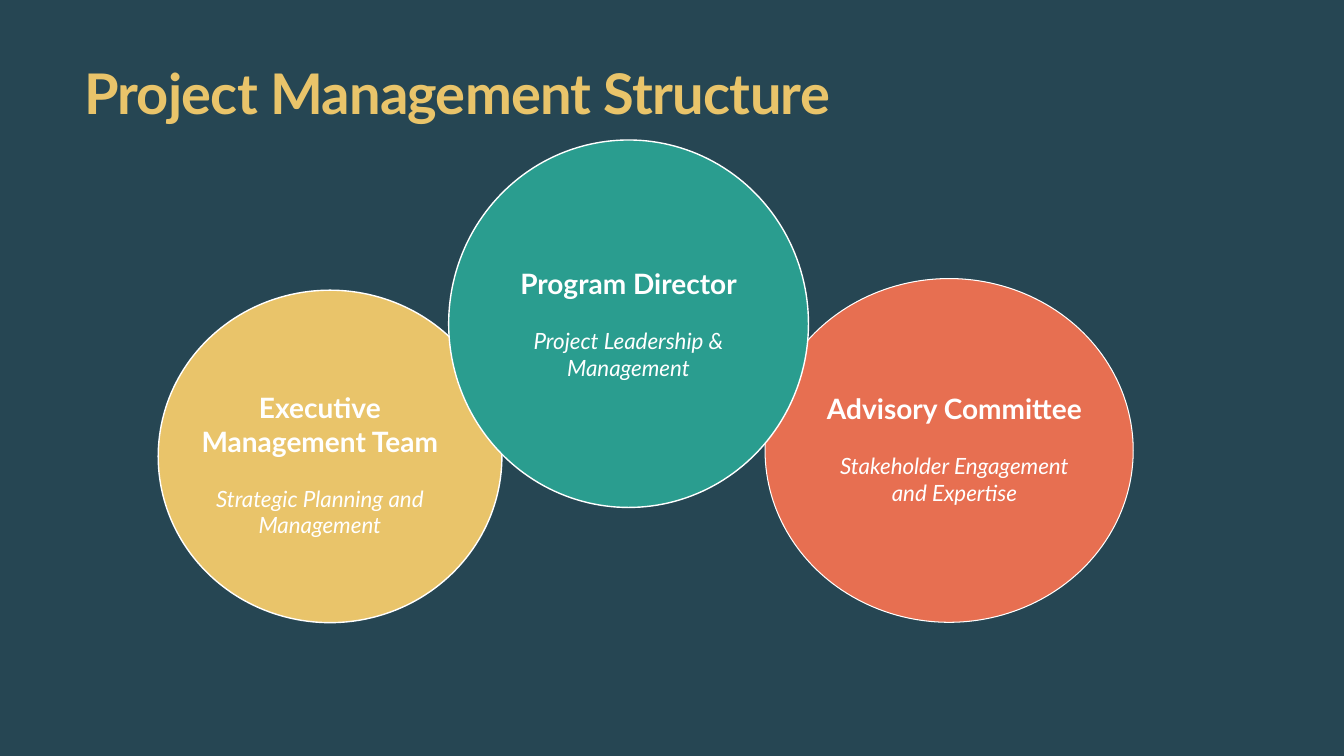
from pptx import Presentation
from pptx.dml.color import RGBColor
from pptx.enum.shapes import MSO_SHAPE as Shape
from pptx.enum.text import MSO_ANCHOR as Anchor, PP_ALIGN as Align
from pptx.util import Pt

COLORS = {
    "navy": "264653",
    "gold": "E9C46A",
    "teal": "2A9D8F",
    "coral": "E76F51",
    "white": "FFFFFF",
}
FONT = "Lato"
ROLE_GAP = 19


def rgb(name):
    return RGBColor.from_string(COLORS[name])


def add_run(paragraph, text, size, color, bold=False, italic=False):
    run = paragraph.add_run()
    run.text = text
    font = run.font
    font.name, font.size = FONT, Pt(size)
    font.bold, font.italic = bold, italic
    font.color.rgb = rgb(color)
    return run


def add_title(slide, text):
    frame = slide.shapes.add_textbox(Pt(60), Pt(42), Pt(840), Pt(48)).text_frame
    frame.word_wrap = True
    frame.vertical_anchor = Anchor.BOTTOM
    frame.margin_left = frame.margin_right = 0
    frame.margin_top = frame.margin_bottom = 0
    run = add_run(frame.paragraphs[0], text, 40, "gold", bold=True)
    run.font._element.set("spc", "-50")


def add_panel(slide, kind, box, color, line_width=None):
    panel = slide.shapes.add_shape(kind, *map(Pt, box))
    panel.shadow.inherit = False
    panel.fill.solid()
    panel.fill.fore_color.rgb = rgb(color)
    if line_width is None:
        panel.line.fill.background()
    else:
        panel.line.color.rgb = rgb("white")
        panel.line.width = Pt(line_width)
    return panel


def write_group(panel, group, role_lines):
    """Group name in bold, with its role in italics below."""
    frame = panel.text_frame
    frame.word_wrap = True
    frame.vertical_anchor = Anchor.MIDDLE
    heading = frame.paragraphs[0]
    heading.alignment = Align.CENTER
    add_run(heading, group, 20, "white", bold=True)
    for index, line in enumerate(role_lines):
        role = frame.add_paragraph()
        role.alignment = Align.CENTER
        role.space_before = Pt(0 if index else ROLE_GAP)
        add_run(role, line, 16, "white", italic=True)


def main():
    prs = Presentation()
    prs.slide_width, prs.slide_height = Pt(960), Pt(540)
    slide = prs.slides.add_slide(prs.slide_layouts[6])
    slide.background.fill.solid()
    slide.background.fill.fore_color.rgb = rgb("navy")

    add_title(slide, "Project Management Structure")

    # Advisory committee: circle with a label panel
    add_panel(slide, Shape.OVAL, (546.5, 199, 263, 245.5), "coral", 0.75)
    advisory = add_panel(slide, Shape.RECTANGLE, (575.3, 257.8, 213, 125.3), "coral")
    write_group(advisory, "Advisory Committee",
                ["Stakeholder Engagement", "and Expertise"])

    # Executive team circle, overlapped by the director circle
    add_panel(slide, Shape.OVAL, (113, 207.3, 245.5, 237.5), "gold", 1)
    director = add_panel(slide, Shape.OVAL, (320.5, 100, 257, 262.5), "teal", 1)
    write_group(director, "Program Director", ["Project Leadership & Management"])

    # Executive team label panel
    executive = add_panel(slide, Shape.RECTANGLE, (136, 273.6, 185, 116.6), "gold")
    write_group(executive, "Executive Management Team",
                ["Strategic Planning and Management"])

    prs.save("out.pptx")


if __name__ == "__main__":
    main()
